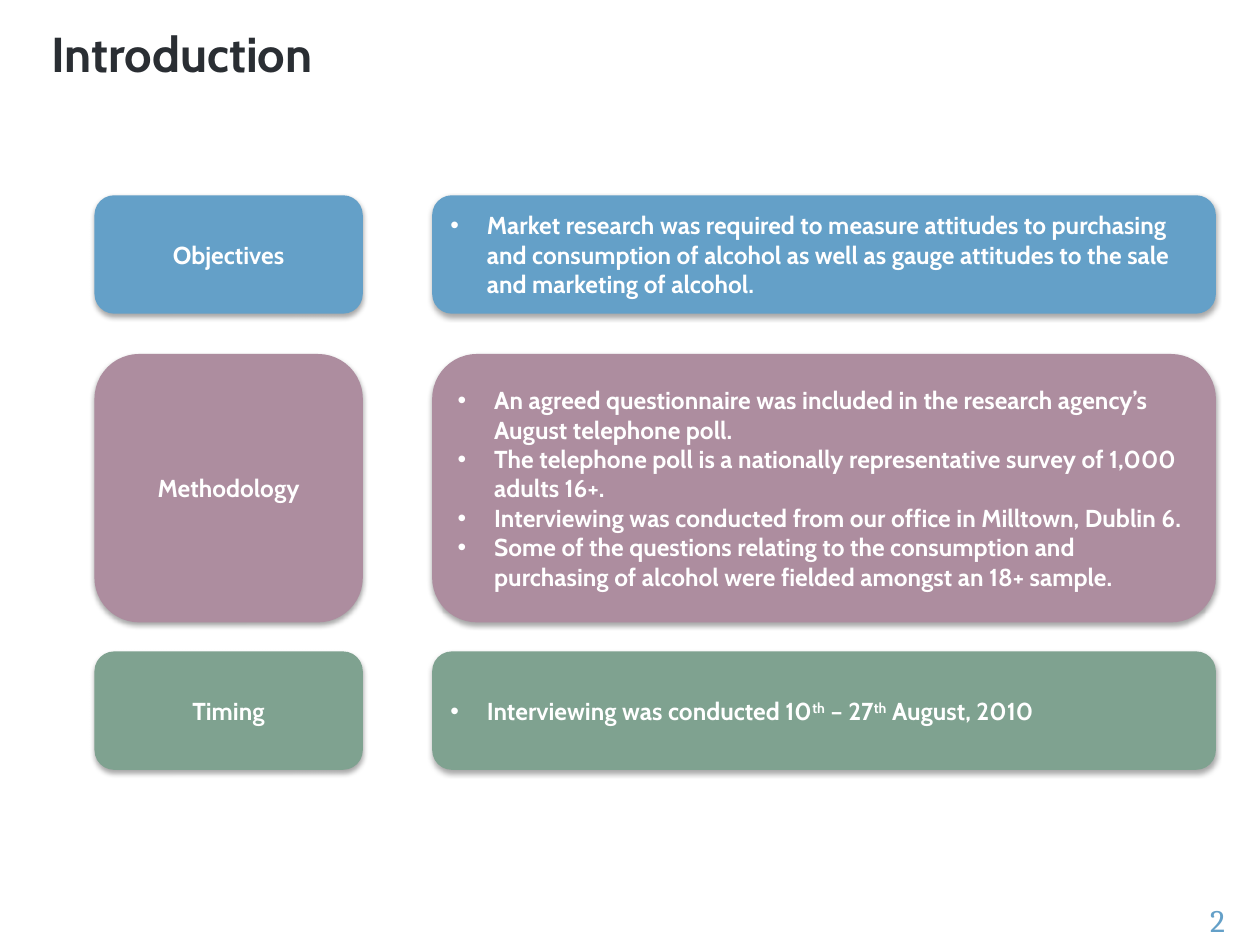
"""Build an introduction slide with objectives, methodology and timing rows."""
from dataclasses import dataclass

import pptx
import pptx.dml.color
import pptx.enum.shapes
import pptx.enum.text
import pptx.oxml
import pptx.oxml.ns
import pptx.util
from pptx.util import Inches

ALIGN = pptx.enum.text.PP_ALIGN
ANCHOR = pptx.enum.text.MSO_ANCHOR
INDENT = Inches(0.29)
LABEL_X, LABEL_W = 0.75, 2.13
DETAIL_X, DETAIL_W = 3.43, 6.22


@dataclass
class Row:
    """One labelled row; text between carets is superscript."""
    label: str
    color: str
    top: float
    height: float
    bullets: list[str]


ROWS = [
    Row("Objectives", "64A0C8", 1.55, 0.94, [
        "Market research was required to measure attitudes to purchasing and "
        "consumption of alcohol as well as gauge attitudes to the sale and "
        "marketing of alcohol.",
    ]),
    Row("Methodology", "AD8D9F", 2.81, 2.13, [
        "An agreed questionnaire was included in the research agency’s "
        "August telephone poll.",
        "The telephone poll is a nationally representative survey of 1,000 "
        "adults 16+.",
        "Interviewing was conducted from our office in Milltown, Dublin 6.",
        "Some of the questions relating to the consumption and purchasing of "
        "alcohol were fielded amongst an 18+ sample.",
    ]),
    Row("Timing", "7FA290", 5.17, 0.94, [
        "Interviewing was conducted 10^th^ – 27^th^ August, 2010",
    ]),
]


def rgb(value: str) -> pptx.dml.color.RGBColor:
    """Turn a hex string into a colour."""
    return pptx.dml.color.RGBColor.from_string(value)


def style(p, size: float, color: str, name: str = "Cabin", bold: bool = True) -> None:
    """Format every run of a paragraph."""
    for r in p.runs:
        r.font.size = pptx.util.Pt(size)
        r.font.name = name
        r.font.bold = bold
        r.font.color.rgb = rgb(color)


def add_shadow(sp) -> None:
    """Give a shape a soft shadow below it."""
    sp.shadow.inherit = False
    effects = sp._element.spPr.find(pptx.oxml.ns.qn("a:effectLst"))
    effects.append(pptx.oxml.parse_xml(
        f'<a:outerShdw {pptx.oxml.ns.nsdecls("a")} blurRad="39370" dist="22860" '
        'dir="5400000" rotWithShape="0"><a:srgbClr val="000000">'
        '<a:alpha val="35000"/></a:srgbClr></a:outerShdw>'))


def add_card(s, row: Row, left: float, width: float):
    """Draw a rounded card of a row and return its text frame."""
    sp = s.shapes.add_shape(
        pptx.enum.shapes.MSO_SHAPE.ROUNDED_RECTANGLE,
        Inches(left), Inches(row.top), Inches(width), Inches(row.height))
    sp.fill.solid()
    sp.fill.fore_color.rgb = rgb(row.color)
    sp.line.fill.background()
    add_shadow(sp)
    tf = sp.text_frame
    tf.vertical_anchor = ANCHOR.MIDDLE
    return tf


def add_label(s, row: Row) -> None:
    """Draw the heading card of a row."""
    tf = add_card(s, row, LABEL_X, LABEL_W)
    tf.word_wrap = False
    tf.text = row.label
    tf.paragraphs[0].alignment = ALIGN.CENTER
    style(tf.paragraphs[0], 14, "FFFFFF")


def add_details(s, row: Row) -> None:
    """Draw the bulleted card of a row."""
    tf = add_card(s, row, DETAIL_X, DETAIL_W)
    tf.word_wrap = True
    tf.text = "\n".join(row.bullets)
    for p, bullet in zip(tf.paragraphs, row.bullets):
        p.alignment = ALIGN.LEFT
        pPr = p._p.get_or_add_pPr()
        pPr.set("marL", str(INDENT))
        pPr.set("indent", str(-INDENT))
        for tag in ('buFont {} typeface="Arial"', 'buChar {} char="•"'):
            pPr.append(pptx.oxml.parse_xml(
                f'<a:{tag.format(pptx.oxml.ns.nsdecls("a"))}/>'))
        first, *rest = bullet.split("^")
        p.runs[0].text = first
        for i, part in enumerate(rest):
            r = p.add_run()
            r.text = part
            if i % 2 == 0:
                r._r.get_or_add_rPr().set("baseline", "30000")
        style(p, 14, "FFFFFF")


def add_title(s, text: str) -> None:
    """Place and format the slide title."""
    sp = s.shapes.title
    sp.left, sp.top = Inches(0.31), Inches(0.14)
    sp.width, sp.height = Inches(9.17), Inches(1.17)
    tf = sp.text_frame
    tf.text = text
    tf.vertical_anchor = ANCHOR.TOP
    tf.paragraphs[0].alignment = ALIGN.LEFT
    style(tf.paragraphs[0], 28, "2A2E33")


def add_page_number(s, number: int) -> None:
    """Write the page number in the bottom right corner."""
    sp = s.shapes.add_textbox(Inches(8.47), Inches(7.1), Inches(1.35), Inches(0.4))
    tf = sp.text_frame
    tf.word_wrap = True
    tf.text = str(number)
    tf.vertical_anchor = ANCHOR.BOTTOM
    tf.paragraphs[0].alignment = ALIGN.RIGHT
    style(tf.paragraphs[0], 18, "64A0C8", "Cambria", False)


def main() -> None:
    """Build and save the slide."""
    prs = pptx.Presentation()
    prs.slide_width, prs.slide_height = Inches(10), Inches(7.5)
    s = prs.slides.add_slide(prs.slide_layouts[5])
    add_page_number(s, 2)
    add_title(s, "Introduction")
    for row in ROWS:
        add_label(s, row)
        add_details(s, row)
    prs.save("out.pptx")


if __name__ == "__main__":
    main()
